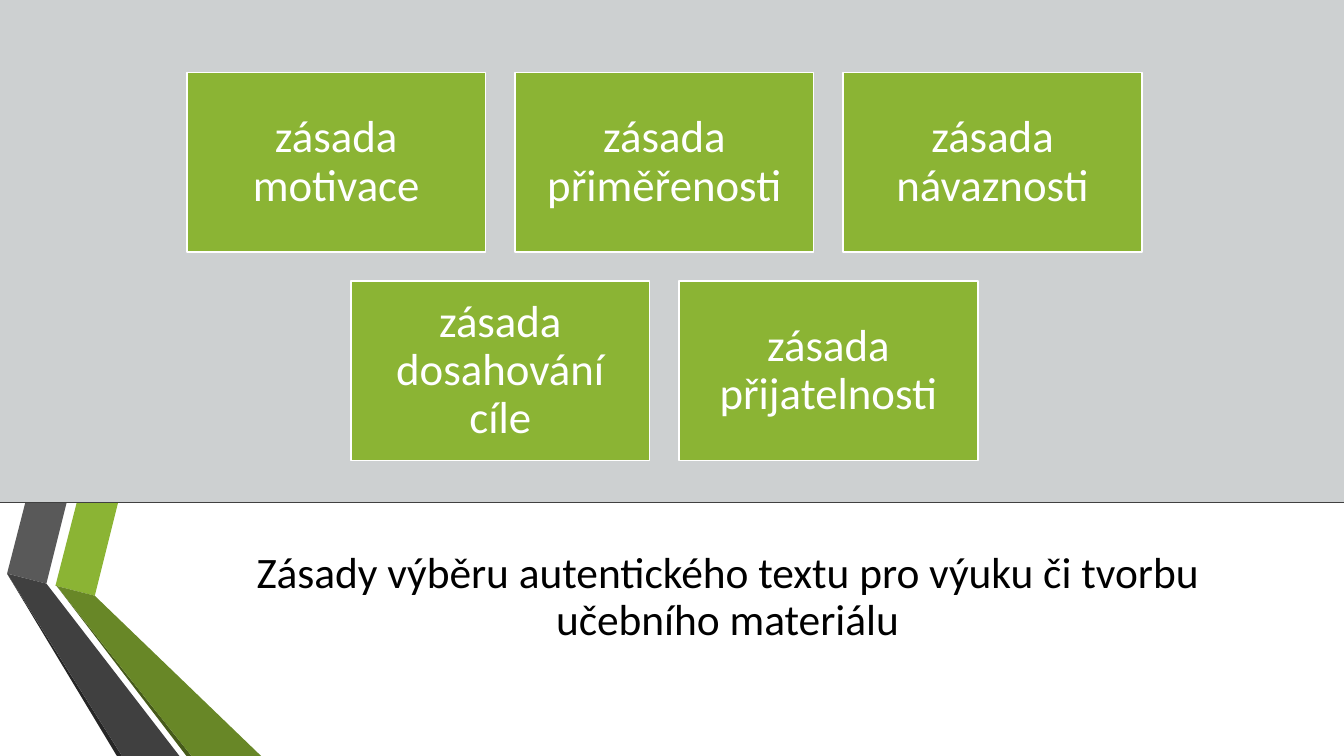
"""Build a slide on the principles of choosing authentic texts."""
from lxml import etree
from pptx import Presentation, util as u
from pptx.dml.color import RGBColor
from pptx.enum import shapes as sh, text as tx
from pptx.oxml.ns import qn

WIDE, HIGH, SPLIT = 13.33, 7.5, 4.99
GREEN, WHITE, DARK = "8BB434", "FFFFFF", "404040"
BOX_W, BOX_H, STEP_X, STEP_Y = 2.96, 1.78, 3.255, 2.07
MID, TOP = 6.59, 0.72
ROWS = [
    ["zásada motivace", "zásada přiměřenosti", "zásada návaznosti"],
    ["zásada dosahování cíle", "zásada přijatelnosti"],
]
TITLE = "Zásady výběru autentického textu pro výuku či tvorbu učebního materiálu"
BANDS = [
    (GREEN, [(0.76, SPLIT), (1.17, SPLIT), (0.94, 5.91), (0.55, 5.81)]),
    ("595959", [(0.25, SPLIT), (0.66, SPLIT), (0.46, 5.79), (0.07, 5.69)]),
    ("262626", [(0.07, 5.69), (1.21, HIGH), (1.16, HIGH)]),
    ("465A1A", [(0.56, 5.81), (1.9, HIGH), (1.85, HIGH)]),
    ("688727", [(0.55, 5.81), (0.94, 5.91), (2.59, HIGH), (1.9, HIGH),
                (0.56, 5.81)]),
    (DARK, [(0.07, 5.69), (0.46, 5.79), (0.53, 5.88), (1.78, HIGH),
            (1.21, HIGH)]),
]


def tint(form, color):
    """Give a fill or font colour format a solid hex colour."""
    form.rgb = RGBColor.from_string(color)


def assign(item, values):
    """Set every attribute named in a dict."""
    for name, value in values.items():
        setattr(item, name, value)


def paint(shape, fill, edge=None):
    """Fill a shape, with an outline only when an edge colour is given."""
    shape.shadow.inherit = False
    shape.fill.solid()
    tint(shape.fill.fore_color, fill)
    if edge:
        shape.line.width = u.Pt(1.25)
        tint(shape.line.color, edge)
    else:
        shape.line.fill.background()


def write(shape, words, size, color, inset):
    """Put centred, wrapped text in a shape."""
    frame = shape.text_frame
    side, edge = (u.Inches(gap) for gap in inset)
    assign(frame, {
        "text": words, "word_wrap": True,
        "vertical_anchor": tx.MSO_ANCHOR.MIDDLE,
        "margin_left": side, "margin_right": side,
        "margin_top": edge, "margin_bottom": edge,
    })
    para = frame.paragraphs[0]
    assign(para, {"alignment": tx.PP_ALIGN.CENTER, "line_spacing": 0.9})
    font = para.runs[0].font
    assign(font, {"size": u.Pt(size), "name": "Calibri"})
    tint(font.color, color)


def block(slide, place, fill, edge=None):
    """Add a painted rectangle."""
    kind = sh.MSO_SHAPE.RECTANGLE
    shape = slide.shapes.add_shape(kind, *map(u.Inches, place))
    paint(shape, fill, edge)
    return shape


def band(slide, fill, points):
    """Add one closed piece of the folded ribbons."""
    spots = [(u.Inches(x), u.Inches(y)) for x, y in points]
    pen = slide.shapes.build_freeform(*spots[0])
    pen.add_line_segments(spots[1:], close=True)
    paint(pen.convert_to_shape(), fill)


def rule(slide):
    """Draw the line between the panel and the title."""
    ends = map(u.Inches, (0, SPLIT, WIDE, SPLIT))
    line = slide.shapes.add_connector(sh.MSO_CONNECTOR.STRAIGHT, *ends)
    line.line.width = u.Pt(0.75)
    tint(line.line.color, DARK)
    etree.SubElement(line._element.spPr, qn("a:effectLst"))


def grid(slide):
    """Lay out the principles in centred rows."""
    for row, names in enumerate(ROWS):
        left = MID - BOX_W / 2 - STEP_X * (len(names) - 1) / 2
        for col, name in enumerate(names):
            place = (left + col * STEP_X, TOP + row * STEP_Y, BOX_W, BOX_H)
            box = block(slide, place, GREEN, WHITE)
            write(box, name, 32, WHITE, (0.13, 0.13))


def main():
    """Compose and save the slide."""
    deck = Presentation()
    assign(deck, {"slide_width": u.Inches(WIDE),
                  "slide_height": u.Inches(HIGH)})
    slide = deck.slides.add_slide(deck.slide_layouts[6])
    block(slide, (0, 0, WIDE, SPLIT), "CDD0D1")
    block(slide, (0, SPLIT, WIDE, HIGH - SPLIT), WHITE)
    place = map(u.Inches, (1.85, 5.37, 10.73, 1.12))
    title = slide.shapes.add_textbox(*place)
    write(title, TITLE, 31, "000000", (0.1, 0.05))
    for fill, points in BANDS[:2]:
        band(slide, fill, points)
    rule(slide)
    for fill, points in BANDS[2:]:
        band(slide, fill, points)
    grid(slide)
    deck.save("out.pptx")


if __name__ == "__main__":
    main()
